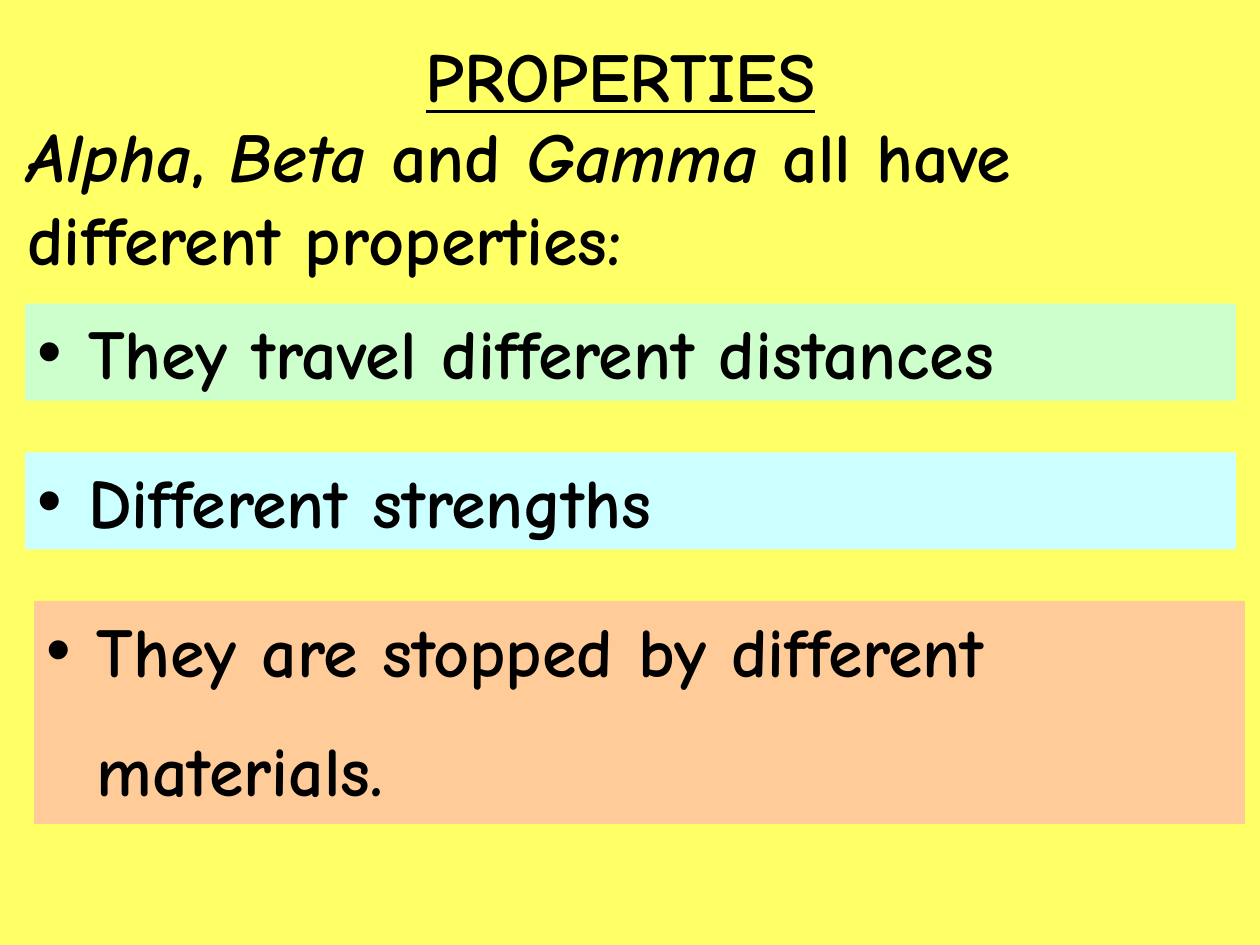
from lxml import etree
from pptx import Presentation, util as u
from pptx.dml.color import RGBColor
from pptx.enum import shapes, text
from pptx.oxml import ns

# Content: paragraphs are lists of (words, italic) runs
TITLE = [[("PROPERTIES", False)]]
INTRO = [[("Alpha", True), (", ", False), ("Beta", True), (" and ", False),
          ("Gamma", True), (" all have different properties:", False)]]
PANELS = [  # fill name, left offset, lines
    ("green", 0, ["They travel different distances"]),
    ("blue", 0, ["Different strengths"]),
    ("orange", 0.07, ["They are stopped by different", "materials."]),
]

THEME = {
    "font": "Comic Neue", "size": 40, "text": "000000", "background": "FFFF66",
    "green": "CCFFCC", "blue": "CCFFFF", "orange": "FFCC99",
}

# Layout in inches
WIDTH, HEIGHT = 10, 7.5
BOX_WIDTH = 9.61
TEXT_LEFT, PANEL_LEFT = 0.12, 0.2
PANEL_TOP, PANEL_STEP = 2.41, 1.18
LINE_HEIGHT, EXTRA_LINE = 0.77, 1.0
INDENT = 0.4
GAP = THEME["size"] / 2


def color(name):
    return RGBColor.from_string(THEME[name])


def write(shape, paragraphs, align=text.PP_ALIGN.LEFT, underline=None):
    frame = shape.text_frame
    frame.word_wrap = True
    frame.vertical_anchor = text.MSO_ANCHOR.TOP
    for index, runs in enumerate(paragraphs):
        paragraph = frame.add_paragraph() if index else frame.paragraphs[0]
        paragraph.alignment = align
        paragraph.space_before = u.Pt(GAP if index else 0)
        font = paragraph.font
        font.name, font.size, font.bold = THEME["font"], u.Pt(THEME["size"]), True
        font.underline = underline
        font.color.rgb = color("text")
        for words, italic in runs:
            run = paragraph.add_run()
            run.text = words
            if italic:
                run.font.italic = True


def indent(paragraph, bullet):
    properties = paragraph._p.get_or_add_pPr()
    properties.set("marL", str(u.Inches(INDENT)))
    properties.set("indent", str(-u.Inches(INDENT) if bullet else 0))
    if bullet:
        mark = etree.Element(ns.qn("a:buChar"), char="•")
        typeface = etree.Element(ns.qn("a:buFont"), typeface="Arial")
        properties.find(ns.qn("a:defRPr")).addprevious(typeface)
        typeface.addnext(mark)


presentation = Presentation()
presentation.slide_width, presentation.slide_height = u.Inches(WIDTH), u.Inches(HEIGHT)
slide = presentation.slides.add_slide(presentation.slide_layouts[6])
slide.background.fill.solid()
slide.background.fill.fore_color.rgb = color("background")

# Title and introduction
for paragraphs, top, height, align, underline in (
    (TITLE, 0.21, LINE_HEIGHT, text.PP_ALIGN.CENTER, True),
    (INTRO, 0.84, 1.43, text.PP_ALIGN.LEFT, None),
):
    box = slide.shapes.add_textbox(*map(u.Inches, (TEXT_LEFT, top, BOX_WIDTH, height)))
    write(box, paragraphs, align, underline)

# Coloured bullet panels
for row, (fill, offset, lines) in enumerate(PANELS):
    place = (PANEL_LEFT + offset, PANEL_TOP + row * PANEL_STEP,
             BOX_WIDTH, LINE_HEIGHT + EXTRA_LINE * (len(lines) - 1))
    panel = slide.shapes.add_shape(shapes.MSO_SHAPE.RECTANGLE, *map(u.Inches, place))
    panel.shadow.inherit = False
    panel.fill.solid()
    panel.fill.fore_color.rgb = color(fill)
    panel.line.fill.background()
    write(panel, [[(line, False)] for line in lines])
    for index, paragraph in enumerate(panel.text_frame.paragraphs):
        indent(paragraph, bullet=index == 0)

presentation.save("out.pptx")
